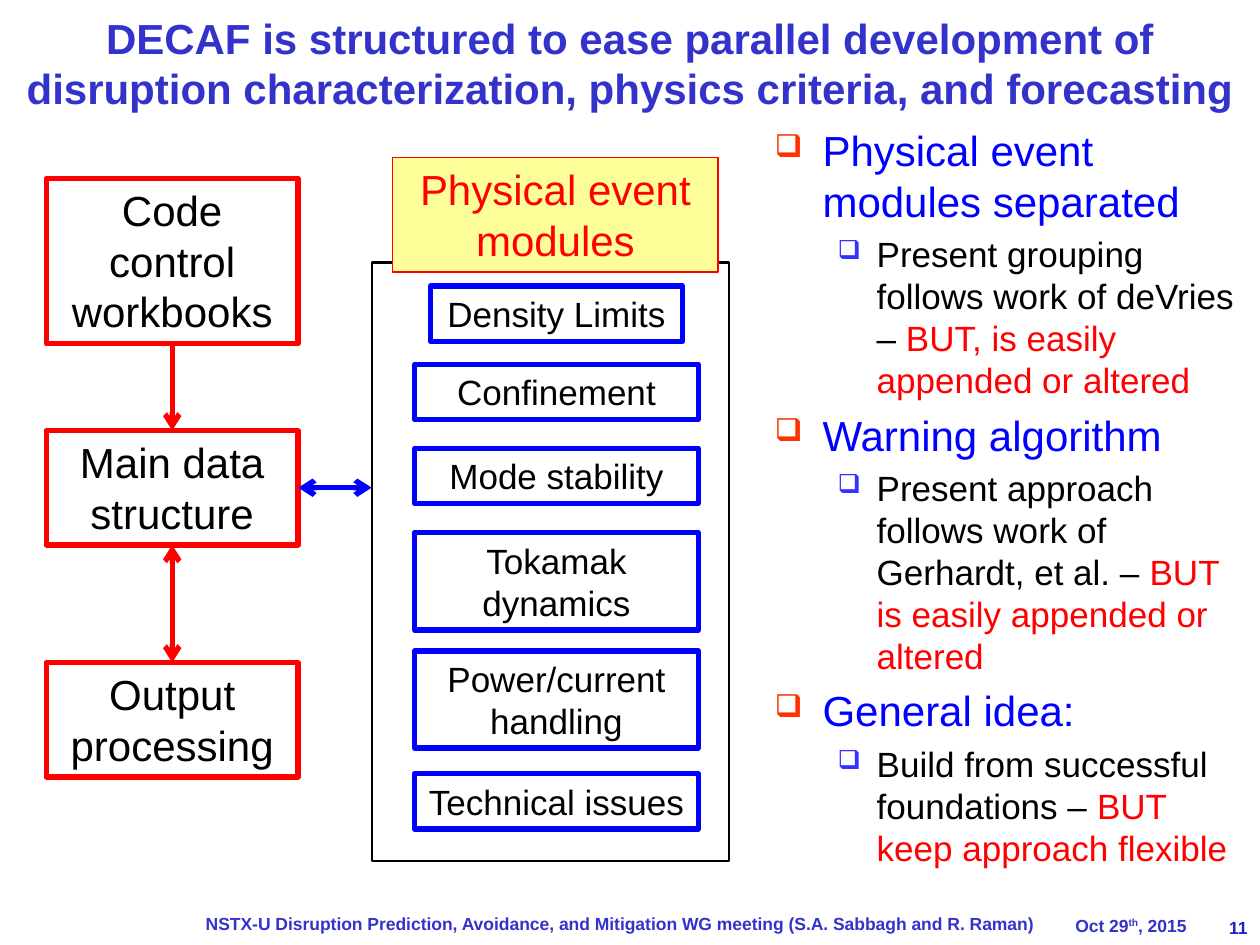
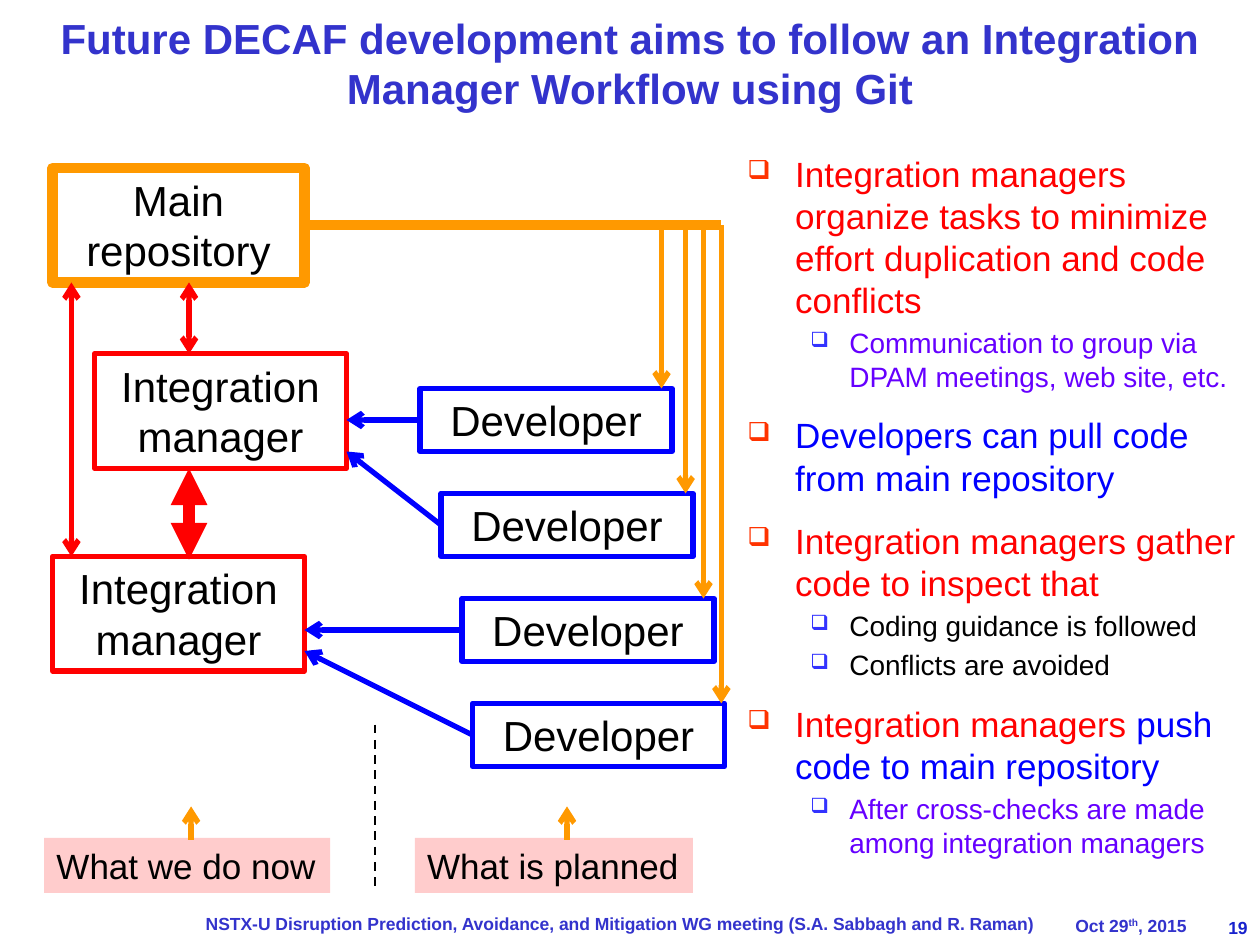
from dataclasses import dataclass

from lxml import etree
from pptx import Presentation
from pptx.dml.color import RGBColor
from pptx.enum.dml import MSO_LINE
from pptx.enum.shapes import MSO_CONNECTOR, MSO_SHAPE
from pptx.enum.text import MSO_ANCHOR, PP_ALIGN
from pptx.oxml.ns import qn
from pptx.util import Inches, Pt

LEFT, MID, RIGHT = PP_ALIGN.LEFT, PP_ALIGN.CENTER, PP_ALIGN.RIGHT
CENTRE, HIGH = MSO_ANCHOR.MIDDLE, MSO_ANCHOR.TOP
RECT, STRAIGHT, DASH = MSO_SHAPE.RECTANGLE, MSO_CONNECTOR.STRAIGHT, MSO_LINE.DASH
NORTH, WEST, SOUTH, EAST = range(4)

WIDTH, HEIGHT = Inches(10), Inches(7.5)
COLS, ROWS = 120, 90


@dataclass(frozen=True)
class Theme:
    font: str = "Arial"
    navy: str = "3333CC"
    page: str = "1822CD"
    red: str = "FF0000"
    blue: str = "0000FF"
    violet: str = "6600FF"
    amber: str = "FF9900"
    black: str = "000000"
    cream: str = "FFFF99"
    pink: str = "FFCCCC"
    marks: tuple = ("FF3300", "3333FF")
    big: int = 24
    mid: int = 20
    low: int = 16
    foot: int = 10
    thin: float = 1.25
    bold: int = 3
    wide: int = 6


T = Theme()
TALL, SHORT = 10.9, 5.25


def col(n):
    return int(WIDTH * n / COLS)


def row(n):
    return int(HEIGHT * n / ROWS)


def place(x, y, w, h):
    return col(x), row(y), col(w), row(h)


def rgb(tone):
    return RGBColor.from_string(tone)


def write(para, runs, size, bold=False):
    """Add runs of (text, colour) or (text, colour, baseline)."""
    for text, tone, *base in runs:
        run = para.add_run()
        run.text = text
        font = run.font
        font.name, font.size, font.bold = T.font, Pt(size), bold
        font.color.rgb = rgb(tone)
        if base:
            run._r.get_or_add_rPr().set("baseline", str(base[0]))


def label(slide, at, runs, size, align, inset=True):
    """Add bold one-paragraph text, centred in height."""
    frame = slide.shapes.add_textbox(*place(*at)).text_frame
    frame.word_wrap = True
    frame.vertical_anchor = CENTRE
    if not inset:
        frame.margin_left = frame.margin_right = 0
        frame.margin_top = frame.margin_bottom = 0
    para = frame.paragraphs[0]
    para.alignment = align
    write(para, runs, size, True)


def box(slide, at, text="", line=None, size=T.big, weight=T.bold,
        fill=None, tone=T.black, align=MID, wrap=True):
    shape = slide.shapes.add_shape(RECT, *place(*at))
    shape.shadow.inherit = False
    if fill:
        shape.fill.solid()
        shape.fill.fore_color.rgb = rgb(fill)
    else:
        shape.fill.background()
    if line:
        shape.line.color.rgb = rgb(line)
        shape.line.width = Pt(weight)
    else:
        shape.line.fill.background()
    if text:
        frame = shape.text_frame
        frame.word_wrap = wrap
        frame.vertical_anchor = HIGH
        para = frame.paragraphs[0]
        para.alignment = align
        write(para, [(text, tone)], size)
    return shape


def link(slide, start, end, tone, weight=T.bold, head=None, tail="arrow", dash=None):
    """Draw a line; each end is a grid point or a (shape, side) pair."""
    points = [(0, 0) if hasattr(a, "shape_id") else (col(a), row(b))
              for a, b in (start, end)]
    wire = slide.shapes.add_connector(STRAIGHT, *points[0], *points[1])
    for (shape, side), join in ((start, wire.begin_connect), (end, wire.end_connect)):
        if hasattr(shape, "shape_id"):
            join(shape, side)
    wire.line.color.rgb = rgb(tone)
    wire.line.width = Pt(weight)
    if dash:
        wire.line.dash_style = dash
    ln = wire.line._get_or_add_ln()
    for tag, kind in (("a:headEnd", head), ("a:tailEnd", tail)):
        if kind:
            etree.SubElement(ln, qn(tag), type=kind)
    etree.SubElement(wire._element.spPr, qn("a:effectLst"))


def mark(para, level):
    """Give a paragraph its hanging indent and square bullet."""
    left, hang = ((0.38, 0.38), (0.81, 0.31))[level]
    props = para._p.get_or_add_pPr()
    props.set("marL", str(Inches(left)))
    props.set("indent", str(-Inches(hang)))
    tint = etree.SubElement(props, qn("a:buClr"))
    etree.SubElement(tint, qn("a:srgbClr"), val=T.marks[level])
    etree.SubElement(props, qn("a:buSzPct"), val="75000")
    etree.SubElement(props, qn("a:buChar"), char="❑")


def points(slide, at, sizes, items, gap=None):
    """Add bullets from (level, runs); gap is the space before top-level ones."""
    frame = slide.shapes.add_textbox(*place(*at)).text_frame
    frame.word_wrap = True
    for i, (level, runs) in enumerate(items):
        para = frame.add_paragraph() if i else frame.paragraphs[0]
        para.level = level
        mark(para, level)
        size = sizes[level]
        if i:
            para.space_before = Pt(gap if gap and not level else 0.2 * size)
        write(para, runs, size)


def start(deck, title, number):
    """Add a slide with the shared title and footer."""
    slide = deck.slides.add_slide(deck.slide_layouts[6])
    label(slide, (92, 85.9, 28, 4.8), [(str(number), T.page)], T.foot, RIGHT)
    meet = ("NSTX-U Disruption Prediction, Avoidance, and Mitigation WG meeting "
            "(S.A. Sabbagh and R. Raman)")
    label(slide, (12, 86.2, 94, 3.6), [(meet, T.navy)], T.foot, MID, False)
    date = [("Oct 29", T.navy), ("th", T.navy, 30000), (", 2015", T.navy)]
    label(slide, (87, 86.3, 26, 3.6), date, T.foot, RIGHT, False)
    label(slide, (0, 0, COLS, 12), [(title, T.navy)], T.big, MID)
    return slide


def modules(deck):
    slide = start(deck, "DECAF is structured to ease parallel development of disruption "
                  "characterization, physics criteria, and forecasting", 11)
    points(slide, (72.6, 11.3, 47, 74.6), (T.big, T.mid), [
        (0, [("Physical event modules separated", T.blue)]),
        (1, [("Present grouping follows work of deVries – ", T.black),
             ("BUT, is easily appended or altered", T.red)]),
        (0, [("Warning algorithm", T.blue)]),
        (1, [("Present approach follows work of Gerhardt, et al. – ", T.black),
             ("BUT is easily appended or altered", T.red)]),
        (0, [("General idea:", T.blue)]),
        (1, [("Build from successful foundations – ", T.black),
             ("BUT keep approach flexible", T.red)]),
    ])
    code, main_data, output = [
        box(slide, (4.4, y, 24, h), text, T.red) for y, h, text in (
            (17, 15.75, "Code control workbooks"),
            (41, TALL, "Main data structure"),
            (63.1, TALL, "Output processing"))]
    link(slide, (code, SOUTH), (main_data, NORTH), T.red)
    link(slide, (main_data, SOUTH), (output, NORTH), T.red, head="arrow")
    link(slide, (35.4, 41 + TALL / 2), (main_data, EAST), T.blue, head="arrow")

    for y, w, h, text in (
            (27.25, 24, SHORT, "Density Limits"),
            (34.7, 27, SHORT, "Confinement"),
            (42.7, 27, SHORT, "Mode stability"),
            (50.75, 27, 9.25, "Tokamak dynamics"),
            (62, 27, 9.25, "Power/current handling"),
            (73.7, 27, SHORT, "Technical issues")):
        box(slide, (53 - w / 2, y, w, h), text, T.blue, T.mid)
    box(slide, (35.4, 25, 34, 57), line=T.black, weight=T.thin)
    box(slide, (37.4, 15, 31, TALL), "Physical event modules", T.red,
        weight=0.75, fill=T.cream, tone=T.red)


def workflow(deck):
    slide = start(deck, "Future DECAF development aims to follow an Integration "
                  "Manager Workflow using Git", 19)
    points(slide, (70, 13.9, 49, 70), (T.mid, T.low), [
        (0, [("Integration managers organize tasks to minimize effort duplication "
              "and code conflicts", T.red)]),
        (1, [("Communication to group via DPAM meetings, web site, etc.", T.violet)]),
        (0, [("Developers can pull code from main repository", T.blue)]),
        (0, [("Integration managers gather code to inspect that", T.red)]),
        (1, [("Coding guidance is followed", T.black)]),
        (1, [("Conflicts are avoided", T.black)]),
        (0, [("Integration managers ", T.red), ("push code to main repository", T.blue)]),
        (1, [("After cross-checks are made among integration managers", T.violet)]),
    ], gap=12)
    top, first, second = 16, 33.7, 53
    base, bus = top + TALL, top + TALL / 2
    repo = box(slide, (5, top, 24, TALL), "Main repository", T.amber, weight=T.wide)
    for x, y in ((9, first), (5, second)):
        box(slide, (x, y, 24, TALL), "Integration manager", T.red)
    link(slide, (6.8, second), (6.8, base), T.red, head="arrow")
    link(slide, (18, first), (18, base), T.red, head="arrow")
    link(slide, (18, second + 0.3), (18, first + TALL), T.red, 7, "triangle", "triangle")

    for x, y, goal, drop in (
            (40, 37, (33, 40), 63), (42, 47, (33, 43), 65.3),
            (44, 57, (29, 60), 67), (45, 67, (29, 62), 68.7)):
        dev = box(slide, (x, y, 24, 6), "Developer", T.blue)
        link(slide, (dev, WEST), goal, T.blue)
        link(slide, (drop, bus), (drop, y), T.amber)
    link(slide, (repo, EAST), (68.7, bus), T.amber, T.wide, tail=None)

    for x, w, stem, text in ((4.2, 27.25, 18.2, "What we do now"),
                             (39.5, 26.5, 54, "What is planned")):
        box(slide, (x, 79.8, w, SHORT), text, size=T.mid, fill=T.pink,
            align=LEFT, wrap=False)
        link(slide, (stem, 80), (stem, 76.8), T.amber)
    link(slide, (35.75, 69), (35.75, 85), T.black, T.thin, tail=None, dash=DASH)


def main():
    deck = Presentation()
    deck.slide_width, deck.slide_height = WIDTH, HEIGHT
    modules(deck)
    workflow(deck)
    deck.save("out.pptx")


if __name__ == "__main__":
    main()
